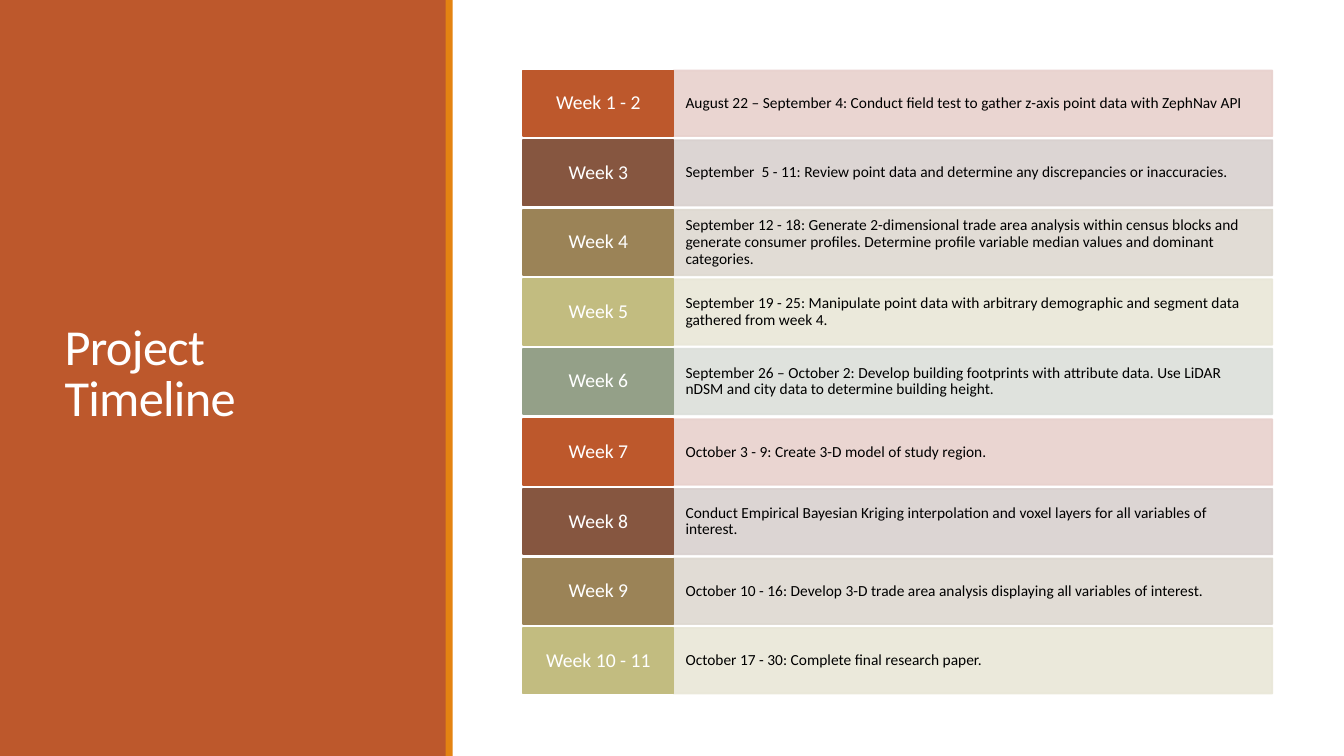
from collections import namedtuple
from itertools import cycle

from lxml import etree
from pptx import Presentation
from pptx.dml.color import RGBColor
from pptx.enum.shapes import MSO_SHAPE
from pptx.enum.text import MSO_ANCHOR, MSO_AUTO_SIZE, PP_ALIGN
from pptx.oxml.ns import qn
from pptx.util import Pt

RECTANGLE = MSO_SHAPE.RECTANGLE
MIDDLE = MSO_ANCHOR.MIDDLE
NO_AUTOFIT = MSO_AUTO_SIZE.NONE
LEFT, CENTER = PP_ALIGN.LEFT, PP_ALIGN.CENTER

EMU_PER_PX = 9144
FONT = "Calibri"
TITLE_ONLY = 5

COLORS = {
    "white": "FFFFFF", "black": "000000", "accent": "E48312",
    "rust": "BD582C", "rust_tint": "E8D1CD",
    "brown": "865640", "brown_tint": "D9D1CF",
    "tan": "9B8357", "tan_tint": "DED9D1",
    "olive": "C2BC80", "olive_tint": "E9E7D8",
    "sage": "94A088", "sage_tint": "DCDFDA",
}
ROW_COLORS = ["rust", "brown", "tan", "olive", "sage"]

WEEKS = [
    ("Week 1 - 2", "August 22 – September 4: Conduct field test to gather z-axis point data with ZephNav API"),
    ("Week 3", "September  5 - 11: Review point data and determine any discrepancies or inaccuracies."),
    ("Week 4", "September 12 - 18: Generate 2-dimensional trade area analysis within census blocks and "
               "generate consumer profiles. Determine profile variable median values and dominant categories."),
    ("Week 5", "September 19 - 25: Manipulate point data with arbitrary demographic and segment data "
               "gathered from week 4."),
    ("Week 6", "September 26 – October 2: Develop building footprints with attribute data. Use LiDAR nDSM "
               "and city data to determine building height."),
    ("Week 7", "October 3 - 9: Create 3-D model of study region."),
    ("Week 8", "Conduct Empirical Bayesian Kriging interpolation and voxel layers for all variables of interest."),
    ("Week 9", "October 10 - 16: Develop 3-D trade area analysis displaying all variables of interest."),
    ("Week 10 - 11", "October 17 - 30: Complete final research paper."),
]

Box = namedtuple("Box", "left top width height")


def px(length):
    return int(length * EMU_PER_PX)


def rgb(name):
    return RGBColor.from_string(COLORS[name])


def set_alpha(fill_parent, percent):
    for color in fill_parent.iter(qn("a:srgbClr")):
        etree.SubElement(color, qn("a:alpha"), val=str(percent * 1000))


def add_rectangle(page, box, color, line_width=None, opacity=None):
    shape = page.shapes.add_shape(RECTANGLE, *map(px, box))
    shape.shadow.inherit = False
    shape.fill.solid()
    shape.fill.fore_color.rgb = rgb(color)
    if line_width:
        shape.line.color.rgb = rgb(color)
        shape.line.width = Pt(line_width)
    else:
        shape.line.fill.background()
    if opacity:
        set_alpha(shape.element.spPr, opacity)
    return shape


def write_text(shape, text, size, color, align=LEFT, line_spacing=0.9,
               margins=(10, 5), tracking=None):
    frame = shape.text_frame
    frame.word_wrap = True
    frame.auto_size = NO_AUTOFIT
    frame.vertical_anchor = MIDDLE
    frame.margin_left = frame.margin_right = px(margins[0])
    frame.margin_top = frame.margin_bottom = px(margins[1])
    para = frame.paragraphs[0]
    para.alignment = align
    para.line_spacing = line_spacing
    span = para.add_run()
    span.text = text
    span.font.name = FONT
    span.font.size = Pt(size)
    span.font.color.rgb = rgb(color)
    if tracking:
        span.font._element.set("spc", str(round(tracking * 100)))


def add_title_panel(page, box):
    stripe = 7
    add_rectangle(page, box._replace(width=box.width - stripe + 1), "rust")
    title = page.shapes.title
    title.left, title.top = px(box.left + 54), px(box.top + 57)
    title.width, title.height = px(box.width - 119), px(box.height - 119)
    write_text(title, "Project Timeline", size=36, color="white",
               line_spacing=0.85, tracking=-0.5)
    page.shapes._spTree.append(title.element)
    add_rectangle(page, Box(box.left + box.width - stripe, box.top, stripe, box.height), "accent")


def add_timeline(page, box):
    row_height = 65
    label_width = 149
    pitch = (box.height - row_height) / (len(WEEKS) - 1)
    for index, ((week, task), color) in enumerate(zip(WEEKS, cycle(ROW_COLORS))):
        top = box.top + round(index * pitch)
        detail = add_rectangle(
            page, Box(box.left + label_width, top, box.width - label_width, row_height),
            color + "_tint", line_width=1.25, opacity=90)
        write_text(detail, task, size=11, color="black", margins=(12, 17))
        label = add_rectangle(page, Box(box.left, top, label_width, row_height),
                              color, line_width=1.25)
        write_text(label, week, size=14, color="white", align=CENTER, margins=(8, 6))


def main():
    deck = Presentation()
    deck.slide_width, deck.slide_height = px(1333), px(750)
    page = deck.slides.add_slide(deck.slide_layouts[TITLE_ONLY])
    add_title_panel(page, Box(0, 0, 449, 750))
    add_timeline(page, Box(519, 70, 743, 618))
    deck.save("out.pptx")


if __name__ == "__main__":
    main()
